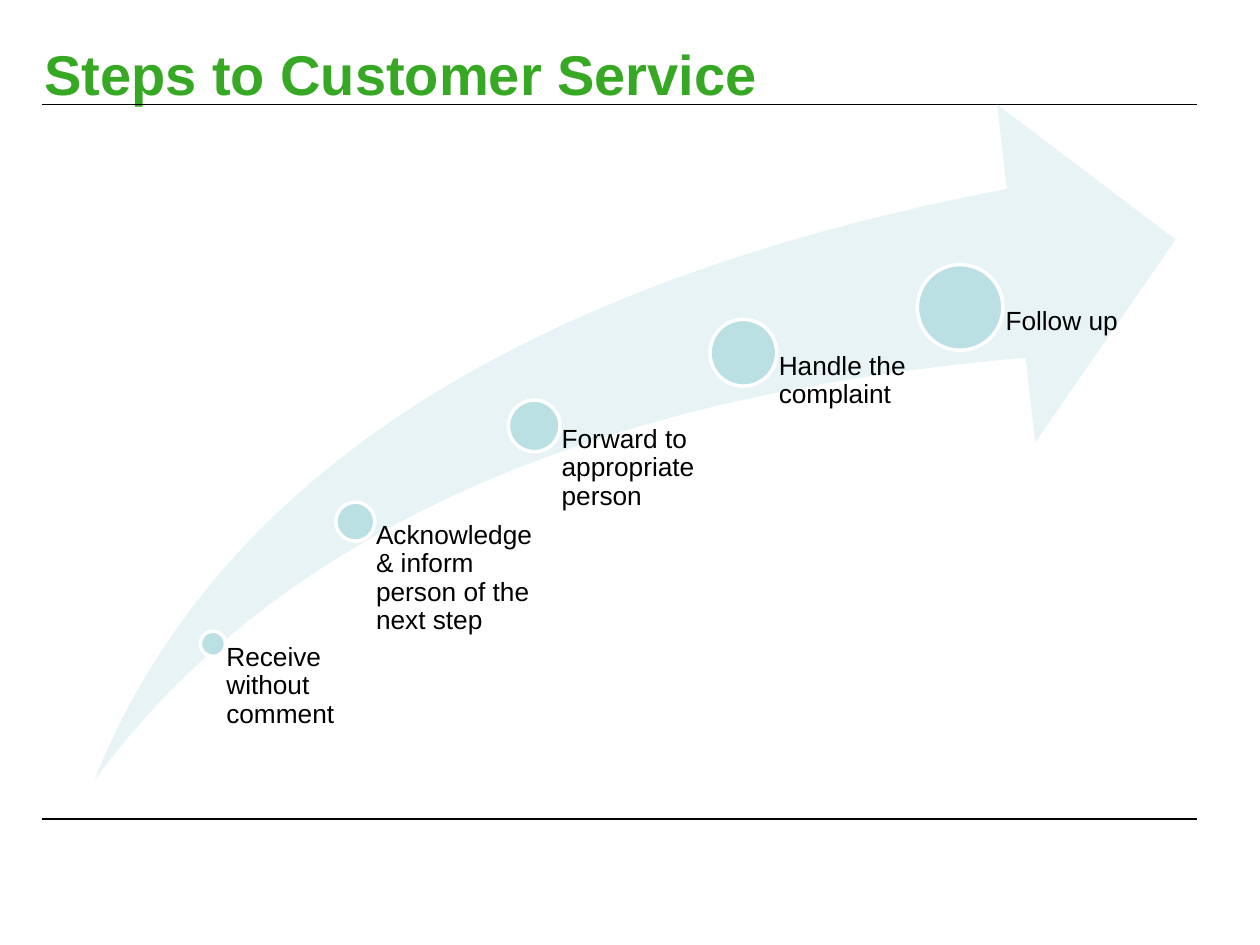
"""Build the customer service steps slide with its rising arrow."""
from dataclasses import dataclass

from lxml import etree
from pptx import Presentation
from pptx.dml.color import RGBColor
from pptx.enum.shapes import MSO_CONNECTOR, MSO_SHAPE
from pptx.enum.text import MSO_ANCHOR, PP_ALIGN
from pptx.oxml.ns import qn
from pptx.shapes.shapetree import GroupShapes, SlideShapes
from pptx.slide import Slide
from pptx.text.text import TextFrame
from pptx.util import Inches, Pt

STRAIGHT = MSO_CONNECTOR.STRAIGHT
SWOOSH = MSO_SHAPE.SWOOSH_ARROW
OVAL = MSO_SHAPE.OVAL
TOP = MSO_ANCHOR.TOP
LEFT = PP_ALIGN.LEFT

FONT = "Arial"
COLORS = {
    "title": "37A824",
    "text": "000000",
    "rule": "000000",
    "arrow": "E7F3F4",
    "marker": "BBE0E3",
    "outline": "FFFFFF",
}
LABEL_BOTTOM = 6.39
INSET_RATIO = 0.53


@dataclass(frozen=True)
class Step:
    text: str
    center_x: float
    center_y: float
    diameter: float
    label_width: float


STEPS = [
    Step("Receive without comment", 1.69, 5.11, 0.2, 1.12),
    Step("Acknowledge & inform person of the next step", 2.82, 4.14, 0.31, 1.42),
    Step("Forward to appropriate person", 4.24, 3.38, 0.41, 1.66),
    Step("Handle the complaint", 5.9, 2.8, 0.53, 1.72),
    Step("Follow up", 7.62, 2.44, 0.68, 1.72),
]


def color(name: str) -> RGBColor:
    return RGBColor.from_string(COLORS[name])


def set_text(frame: TextFrame, text: str, size: float, color_name: str,
             bold: bool, inset_left: float, inset_right: float, inset_top: float) -> None:
    frame.word_wrap = True
    frame.vertical_anchor = TOP
    frame.margin_left = Inches(inset_left)
    frame.margin_right = Inches(inset_right)
    frame.margin_top = Inches(inset_top)
    frame.margin_bottom = 0
    paragraph = frame.paragraphs[0]
    paragraph.alignment = LEFT
    paragraph.line_spacing = 0.9 if not bold else 1.0
    run = paragraph.add_run()
    run.text = text
    run.font.name = FONT
    run.font.size = Pt(size)
    run.font.bold = bold
    run.font.color.rgb = color(color_name)


def add_rule(shapes: SlideShapes, y: float) -> None:
    rule = shapes.add_connector(STRAIGHT, Inches(0.33), Inches(y), Inches(9.5), Inches(y))
    rule.line.color.rgb = color("rule")
    rule.line.width = Pt(0.75)
    etree.SubElement(rule._element.spPr, qn("a:effectLst"))


def add_title(slide: Slide) -> None:
    title = slide.shapes.title
    title.left, title.top = Inches(0.25), Inches(0.17)
    title.width, title.height = Inches(9), Inches(1.25)
    set_text(title.text_frame, "Steps to Customer Service", 32, "title", True, 0.1, 0.1, 0.14)


def add_arrow(shapes: GroupShapes) -> None:
    arrow = shapes.add_shape(SWOOSH, Inches(0.75), Inches(0.83), Inches(8.58), Inches(5.36))
    arrow.adjustments[0] = 0.25
    arrow.adjustments[1] = 0.25
    arrow.shadow.inherit = False
    arrow.fill.solid()
    arrow.fill.fore_color.rgb = color("arrow")
    arrow.line.fill.background()


def add_step(shapes: GroupShapes, step: Step) -> None:
    radius = step.diameter / 2
    marker = shapes.add_shape(
        OVAL, Inches(step.center_x - radius), Inches(step.center_y - radius),
        Inches(step.diameter), Inches(step.diameter))
    marker.shadow.inherit = False
    marker.fill.solid()
    marker.fill.fore_color.rgb = color("marker")
    marker.line.color.rgb = color("outline")
    marker.line.width = Pt(2)
    label = shapes.add_textbox(
        Inches(step.center_x), Inches(step.center_y),
        Inches(step.label_width), Inches(LABEL_BOTTOM - step.center_y))
    set_text(label.text_frame, step.text, 15, "text", False, step.diameter * INSET_RATIO, 0, 0)


def main() -> None:
    presentation = Presentation()
    presentation.slide_width = Inches(10)
    presentation.slide_height = Inches(7.5)
    slide = presentation.slides.add_slide(presentation.slide_layouts[5])
    for y in (6.5, 0.83):
        add_rule(slide.shapes, y)
    add_title(slide)
    diagram = slide.shapes.add_group_shape()
    add_arrow(diagram.shapes)
    for step in STEPS:
        add_step(diagram.shapes, step)
    presentation.save("out.pptx")


if __name__ == "__main__":
    main()
